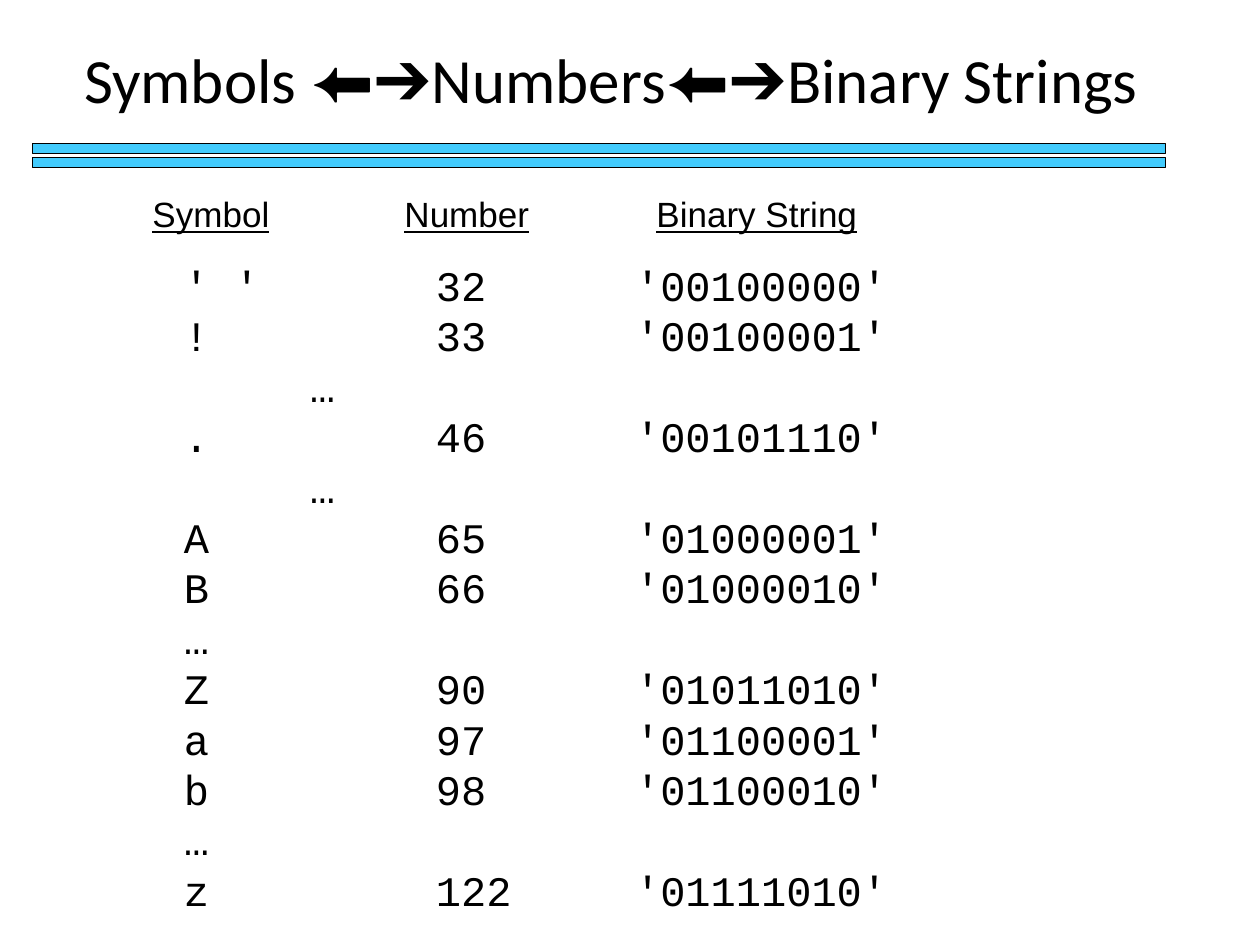
from pptx import Presentation
from pptx.dml.color import RGBColor
from pptx.enum.shapes import MSO_SHAPE
from pptx.enum.text import MSO_ANCHOR, MSO_AUTO_SIZE, PP_ALIGN
from pptx.util import Inches, Pt

BLACK = "000000"
BAR_BLUE = "42CBFD"
ROW_PITCH = 28.8
SYMBOL_ROWS = [
    "' '\t\t32", "!\t\t33", "\t…", ".\t\t46", "\t…", "A\t\t65", "B\t\t66",
    "…", "Z\t\t90", "a\t\t97", "b\t\t98", "…", "z\t\t122",
]
BINARY_GROUPS = [
    ["'00100000'", "'00100001'"],
    ["'00101110'"],
    ["'01000001'", "'01000010'"],
    ["'01011010'", "'01100001'", "'01100010'"],
    ["'01111010'"],
]


def color(value):
    """Return the RGB colour for a hex string."""
    return RGBColor.from_string(value)


def set_attributes(target, values):
    """Set every attribute in a dict of format values."""
    for name, value in values.items():
        setattr(target, name, value)


def format_font(font, name, size, **values):
    """Apply a typeface, point size and black colour to a font."""
    set_attributes(font, {"name": name, "size": Pt(size), **values})
    font.color.rgb = color(BLACK)


def set_frame(text_frame, left, top, right, bottom, anchor):
    """Set the wrapping, margins in inches and anchor of a text frame."""
    set_attributes(text_frame, {
        "word_wrap": True,
        "auto_size": MSO_AUTO_SIZE.NONE,
        "vertical_anchor": anchor,
        "margin_left": Inches(left),
        "margin_top": Inches(top),
        "margin_right": Inches(right),
        "margin_bottom": Inches(bottom),
    })


def add_title(slide, box):
    """Place the title, with its arrows in a second typeface."""
    title = slide.shapes.title
    set_attributes(title, dict(zip(("left", "top", "width", "height"), map(Inches, box))))
    set_frame(title.text_frame, 0.1, 0.05, 0.14, 0.05, MSO_ANCHOR.MIDDLE)
    paragraph = title.text_frame.paragraphs[0]
    paragraph.alignment = PP_ALIGN.CENTER
    for text in ("Symbols ", "⬅➔", "Numbers", "⬅➔", "Binary Strings"):
        run = paragraph.add_run()
        run.text = text
        format_font(run.font, "Arial" if text == "⬅➔" else "Calibri", 36)


def add_double_rule(slide, box):
    """Draw two grouped bars along the top and bottom of the box."""
    left, top, width, height = box
    bar_height = 0.08
    group = slide.shapes.add_group_shape()
    for bar_top in (top, top + height - bar_height):
        bar = group.shapes.add_shape(
            MSO_SHAPE.RECTANGLE, *map(Inches, (left, bar_top, width, bar_height)))
        bar.shadow.inherit = False
        bar.fill.solid()
        bar.fill.fore_color.rgb = color(BAR_BLUE)
        bar.line.color.rgb = color(BLACK)
        bar.line.width = Pt(0.75)


def add_lines(slide, box, lines, font, indent=0.04, top_margin=0.06, pitch=None):
    """Write (text, space before) lines with one-inch tab stops."""
    text_frame = slide.shapes.add_textbox(*map(Inches, box)).text_frame
    set_frame(text_frame, 0, top_margin, 0.04, 0, MSO_ANCHOR.TOP)
    for index, (text, space_before) in enumerate(lines):
        paragraph = text_frame.add_paragraph() if index else text_frame.paragraphs[0]
        properties = paragraph._p.get_or_add_pPr()
        for name, value in {"marL": indent, "indent": 0, "defTabSz": 1}.items():
            properties.set(name, str(Inches(value)))
        paragraph.space_before = Pt(space_before)
        if pitch:
            paragraph.line_spacing = Pt(pitch)
        run = paragraph.add_run()
        run.text = text
        format_font(run.font, **font)


def add_headings(slide, box):
    """Write the underlined column headings."""
    add_lines(slide, box, [("Symbol\t\tNumber\t\tBinary String", 0)],
              {"name": "Arial", "size": 20, "underline": True}, top_margin=0.03)


def add_binary_column(slide, box, font):
    """Write the binary strings, leaving one row free between groups."""
    lines = [
        (text, ROW_PITCH if group_index and not row_index else 0)
        for group_index, group in enumerate(BINARY_GROUPS)
        for row_index, text in enumerate(group)
    ]
    add_lines(slide, box, lines, font, indent=0.54, pitch=ROW_PITCH)


def add_symbol_column(slide, box, font):
    """Write the symbols with their numbers."""
    add_lines(slide, box, [(text, 0) for text in SYMBOL_ROWS], font, pitch=ROW_PITCH)


def main():
    """Build and save the slide."""
    presentation = Presentation()
    presentation.slide_width = Inches(10)
    presentation.slide_height = Inches(7.5)
    slide = presentation.slides.add_slide(presentation.slide_layouts[5])
    code_font = {"name": "Courier New", "size": 24}
    add_title(slide, (0.08, 0, 9.58, 1.25))
    add_double_rule(slide, (0.26, 1.14, 8.99, 0.19))
    add_headings(slide, (1.17, 1.5, 6.39, 0.74))
    add_binary_column(slide, (4.5, 2, 3.85, 5.25), code_font)
    add_symbol_column(slide, (1.42, 2, 3.22, 5.17), code_font)
    presentation.save("out.pptx")


if __name__ == "__main__":
    main()
